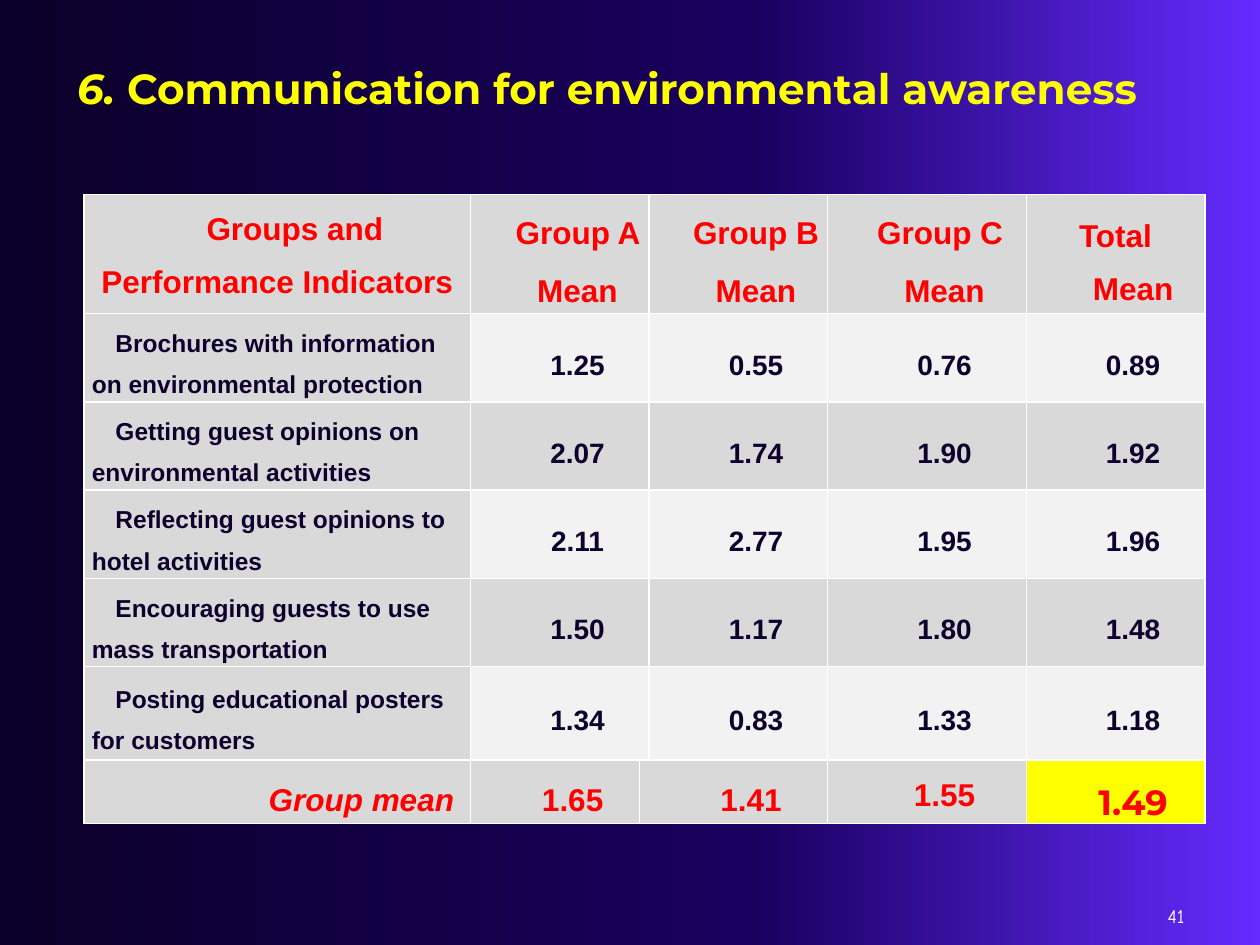
from copy import deepcopy
from dataclasses import dataclass, replace

from lxml.etree import SubElement
from pptx import Presentation
from pptx.dml.color import RGBColor
from pptx.enum.text import MSO_ANCHOR, PP_ALIGN
from pptx.oxml.ns import qn
from pptx.slide import Slide
from pptx.table import _Cell
from pptx.text.text import _Paragraph
from pptx.util import Pt

NIGHT = RGBColor(0x0B, 0x00, 0x29)
INDIGO = RGBColor(0x1A, 0x00, 0x5F)
VIOLET = RGBColor(0x65, 0x2B, 0xFF)
RED = RGBColor(0xFF, 0x00, 0x00)
INK = RGBColor(0x0C, 0x00, 0x2C)
YELLOW = RGBColor(0xFF, 0xFF, 0x00)
WHITE = RGBColor(0xFF, 0xFF, 0xFF)
GREY = RGBColor(0xD9, 0xD9, 0xD9)
LIGHT_GREY = RGBColor(0xF2, 0xF2, 0xF2)

TABLE_LEFT = 48
CELL_MARGIN = 4.5


@dataclass(frozen=True)
class TextStyle:
    size: float
    color: RGBColor
    font: str = "Arial"
    bold: bool = True
    italic: bool = False


@dataclass(frozen=True)
class Line:
    text: str
    indent: float = 20
    space_before: float = 3


@dataclass(frozen=True)
class CellEntry:
    lines: tuple[Line, ...]
    style: TextStyle
    fill: RGBColor = GREY
    alignment: PP_ALIGN = PP_ALIGN.CENTER
    anchor: MSO_ANCHOR = MSO_ANCHOR.MIDDLE


HEADING = TextStyle(18, RED)
INDICATOR = TextStyle(14, INK)
VALUE = TextStyle(16, INK)
TITLE = TextStyle(24, YELLOW, "Montserrat")
TOTAL = TextStyle(20, RED, "Montserrat")
PAGE_NUMBER = TextStyle(11, WHITE, "Comic Neue", bold=False)

INDICATORS = (
    ("Brochures with information on environmental protection", ("1.25", "0.55", "0.76", "0.89")),
    ("Getting guest opinions on environmental activities", ("2.07", "1.74", "1.90", "1.92")),
    ("Reflecting guest opinions to hotel activities", ("2.11", "2.77", "1.95", "1.96")),
    ("Encouraging guests to use mass transportation", ("1.50", "1.17", "1.80", "1.48")),
    ("Posting educational posters for customers", ("1.34", "0.83", "1.33", "1.18")),
)


def add_run(paragraph: _Paragraph, text: str, style: TextStyle) -> None:
    run = paragraph.add_run()
    run.text = text
    run.font.name = style.font
    run.font.size = Pt(style.size)
    run.font.bold = style.bold
    run.font.italic = style.italic
    run.font.color.rgb = style.color


def set_borders(cell: _Cell) -> None:
    properties = cell._tc.get_or_add_tcPr()
    for position, side in enumerate(("lnL", "lnR", "lnT", "lnB")):
        line = properties.makeelement(qn(f"a:{side}"), {"w": str(Pt(1))})
        fill = SubElement(line, qn("a:solidFill"))
        SubElement(fill, qn("a:srgbClr"), {"val": str(WHITE)})
        properties.insert(position, line)


def fill_cell(cell: _Cell, entry: CellEntry) -> None:
    cell.margin_left = cell.margin_right = Pt(CELL_MARGIN)
    cell.margin_top = cell.margin_bottom = Pt(0)
    cell.vertical_anchor = entry.anchor
    cell.fill.solid()
    cell.fill.fore_color.rgb = entry.fill
    set_borders(cell)
    for index, line in enumerate(entry.lines):
        frame = cell.text_frame
        paragraph = frame.add_paragraph() if index else frame.paragraphs[0]
        paragraph.alignment = entry.alignment
        paragraph.line_spacing = 1.5
        paragraph.space_before = Pt(line.space_before)
        properties = paragraph._p.get_or_add_pPr()
        properties.set("marL", "0")
        properties.set("indent", str(Pt(line.indent)))
        add_run(paragraph, line.text, entry.style)


def add_grid(slide: Slide, top: float, widths: tuple[float, ...],
             heights: tuple[float, ...], rows: list[list[CellEntry]]) -> None:
    table = slide.shapes.add_table(
        len(heights), len(widths), Pt(TABLE_LEFT), Pt(top), Pt(sum(widths)), Pt(sum(heights))
    ).table
    for column, width in zip(table.columns, widths):
        column.width = Pt(width)
    for row, height, entries in zip(table.rows, heights, rows):
        row.height = Pt(height)
        for cell, entry in zip(row.cells, entries):
            fill_cell(cell, entry)


def add_text(slide: Slide, left: float, top: float, width: float, height: float,
             runs: list[tuple[str, TextStyle]], alignment: PP_ALIGN, anchor: MSO_ANCHOR) -> None:
    frame = slide.shapes.add_textbox(Pt(left), Pt(top), Pt(width), Pt(height)).text_frame
    frame.word_wrap = True
    frame.vertical_anchor = anchor
    paragraph = frame.paragraphs[0]
    paragraph.alignment = alignment
    for text, style in runs:
        add_run(paragraph, text, style)


def paint_background(slide: Slide) -> None:
    fill = slide.background.fill
    fill.gradient()
    fill.gradient_angle = 0
    stop_list = slide.element.xpath(".//a:gsLst")[0]
    stop_list.append(deepcopy(stop_list[-1]))
    for stop, position, color in zip(fill.gradient_stops, (0, 0.6, 1), (NIGHT, INDIGO, VIOLET)):
        stop.position = position
        stop.color.rgb = color


def indicator_rows() -> list[list[CellEntry]]:
    header = [CellEntry((Line("Groups and Performance Indicators"),), HEADING,
                        anchor=MSO_ANCHOR.TOP)]
    header += [CellEntry((Line(f"Group {letter} "), Line("Mean")), HEADING) for letter in "ABC"]
    header.append(CellEntry((Line("Total", indent=-10), Line("Mean", space_before=0)), HEADING))
    rows = [header]
    for index, (label, values) in enumerate(INDICATORS):
        band = GREY if index % 2 else LIGHT_GREY
        label_entry = CellEntry((Line(label, indent=13.5),), INDICATOR, alignment=PP_ALIGN.LEFT)
        rows.append([label_entry] + [CellEntry((Line(value),), VALUE, band) for value in values])
    return rows


def mean_row() -> list[CellEntry]:
    return [
        CellEntry((Line("Group mean "),), replace(HEADING, italic=True),
                  alignment=PP_ALIGN.RIGHT),
        CellEntry((Line("1.65"),), HEADING),
        CellEntry((Line("1.41"),), HEADING),
        CellEntry((Line("1.55"),), HEADING, anchor=MSO_ANCHOR.TOP),
        CellEntry((Line("1.49"),), TOTAL, YELLOW),
    ]


def main() -> None:
    presentation = Presentation()
    presentation.slide_width = Pt(720)
    presentation.slide_height = Pt(540)
    slide = presentation.slides.add_slide(presentation.slide_layouts[6])
    paint_background(slide)
    add_grid(slide, 111.25, (221, 102, 102, 113.5, 102),
             (68, 50.4, 50.4, 50.4, 50.4, 53.5), indicator_rows())
    add_text(slide, 37, 32, 652, 36,
             [("6. ", replace(TITLE, italic=True)),
              ("Communication for environmental awareness", TITLE)],
             PP_ALIGN.LEFT, MSO_ANCHOR.TOP)
    add_grid(slide, 434.5, (221, 96.5, 107.5, 113.5, 102), (36,), [mean_row()])
    add_text(slide, 516, 513.5, 168, 20, [("41", PAGE_NUMBER)],
             PP_ALIGN.RIGHT, MSO_ANCHOR.MIDDLE)
    presentation.save("out.pptx")


if __name__ == "__main__":
    main()
